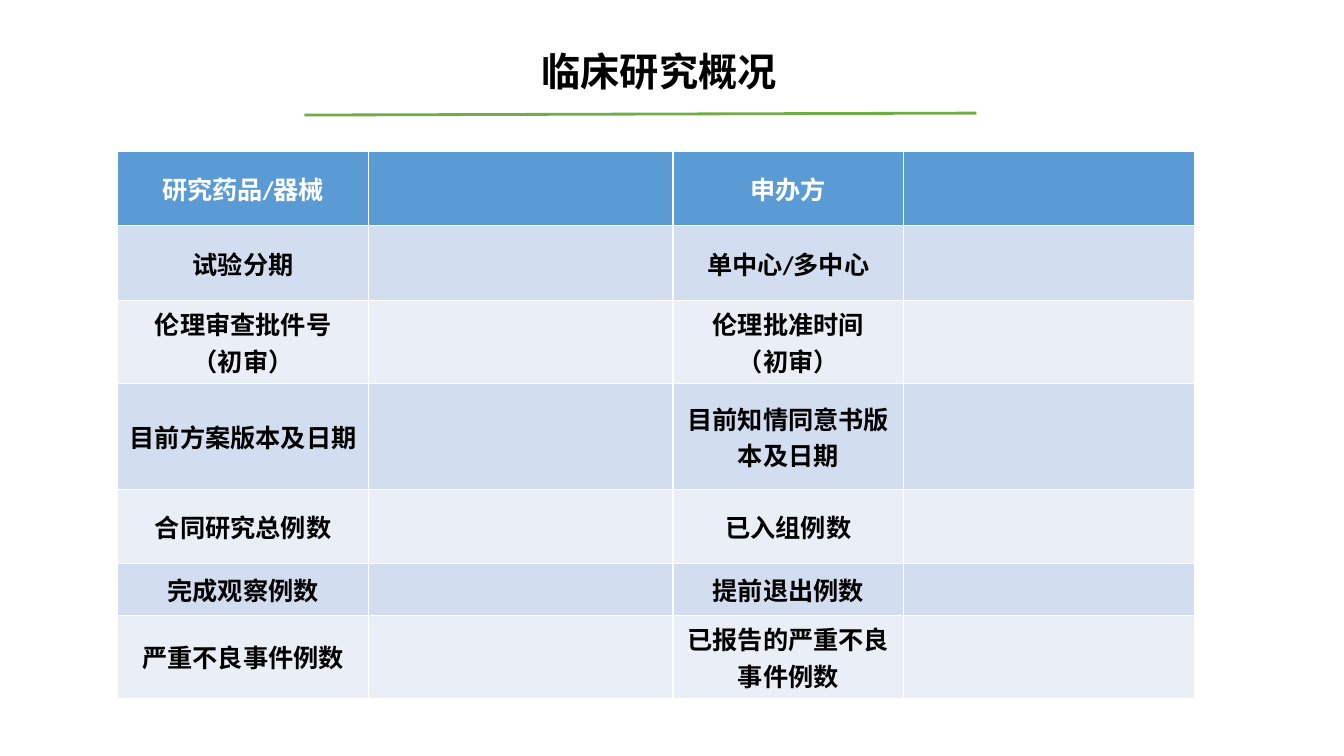
from lxml import etree
from pptx import Presentation
from pptx.dml.color import RGBColor
from pptx.enum.shapes import MSO_CONNECTOR
from pptx.enum.text import MSO_ANCHOR, PP_ALIGN
from pptx.oxml.ns import qn
from pptx.util import Pt

STRAIGHT = MSO_CONNECTOR.STRAIGHT
MIDDLE = MSO_ANCHOR.MIDDLE
LEFT, CENTER = PP_ALIGN.LEFT, PP_ALIGN.CENTER

COLORS = {
    "rule": "70AD47",
    "header": "5B9BD5",
    "band_dark": "D2DEEF",
    "band_light": "EAEFF7",
    "white": "FFFFFF",
    "black": "000000",
}
CJK_FONT = "Noto Sans CJK SC"
COLUMN_WIDTHS = [179.3, 217.4, 164.9, 207.4]
ROW_HEIGHTS = [53.3, 53.3, 53.3, 75.6, 53.3, 36.7, 53.3]
LABELS = [
    ("研究药品/器械", "申办方"),
    ("试验分期", "单中心/多中心"),
    ("伦理审查批件号\n（初审）", "伦理批准时间\n（初审）"),
    ("目前方案版本及日期", "目前知情同意书版本及日期"),
    ("合同研究总例数", "已入组例数"),
    ("完成观察例数", "提前退出例数"),
    ("严重不良事件例数", "已报告的严重不良事件例数"),
]


def format_paragraph(para, size, latin, color, align):
    para.alignment = align
    font = para.font
    font.size = Pt(size)
    font.bold = True
    font.color.rgb = RGBColor.from_string(COLORS[color])
    font.name = latin
    for span in para.runs:
        properties = span._r.get_or_add_rPr()
        etree.SubElement(properties, qn("a:ea"), typeface=CJK_FONT)


deck = Presentation()
deck.slide_width, deck.slide_height = Pt(960), Pt(540)
page = deck.slides.add_slide(deck.slide_layouts[5])

rule = page.shapes.add_connector(STRAIGHT, Pt(217.5), Pt(82.2), Pt(697.5), Pt(80.8))
rule.line.color.rgb = RGBColor.from_string(COLORS["rule"])
rule.line.width = Pt(2)
etree.SubElement(rule._element.spPr, qn("a:effectLst"))

title = page.shapes.title
title.left, title.top, title.width, title.height = Pt(377.3), Pt(28.8), Pt(564.5), Pt(44)
frame = title.text_frame
frame.text = "临床研究概况"
frame.word_wrap = True
frame.vertical_anchor = MIDDLE
frame.margin_left = frame.margin_right = Pt(9.6)
frame.margin_top = frame.margin_bottom = Pt(4.8)
format_paragraph(frame.paragraphs[0], 28, CJK_FONT, "black", LEFT)

table = page.shapes.add_table(
    len(ROW_HEIGHTS), len(COLUMN_WIDTHS), Pt(84), Pt(108),
    Pt(sum(COLUMN_WIDTHS)), Pt(sum(ROW_HEIGHTS)),
).table
for column, width in zip(table.columns, COLUMN_WIDTHS):
    column.width = Pt(width)

for row_index, (left_label, right_label) in enumerate(LABELS):
    row = table.rows[row_index]
    row.height = Pt(ROW_HEIGHTS[row_index])
    if row_index == 0:
        fill, ink = "header", "white"
    else:
        fill, ink = ("band_dark" if row_index % 2 else "band_light"), "black"
    for cell, label in zip(row.cells, (left_label, "", right_label, "")):
        cell.fill.solid()
        cell.fill.fore_color.rgb = RGBColor.from_string(COLORS[fill])
        cell.vertical_anchor = MIDDLE
        if label:
            cell.text = label
            for para in cell.text_frame.paragraphs:
                format_paragraph(para, 18, "Calibri", ink, CENTER)

deck.save("out.pptx")
